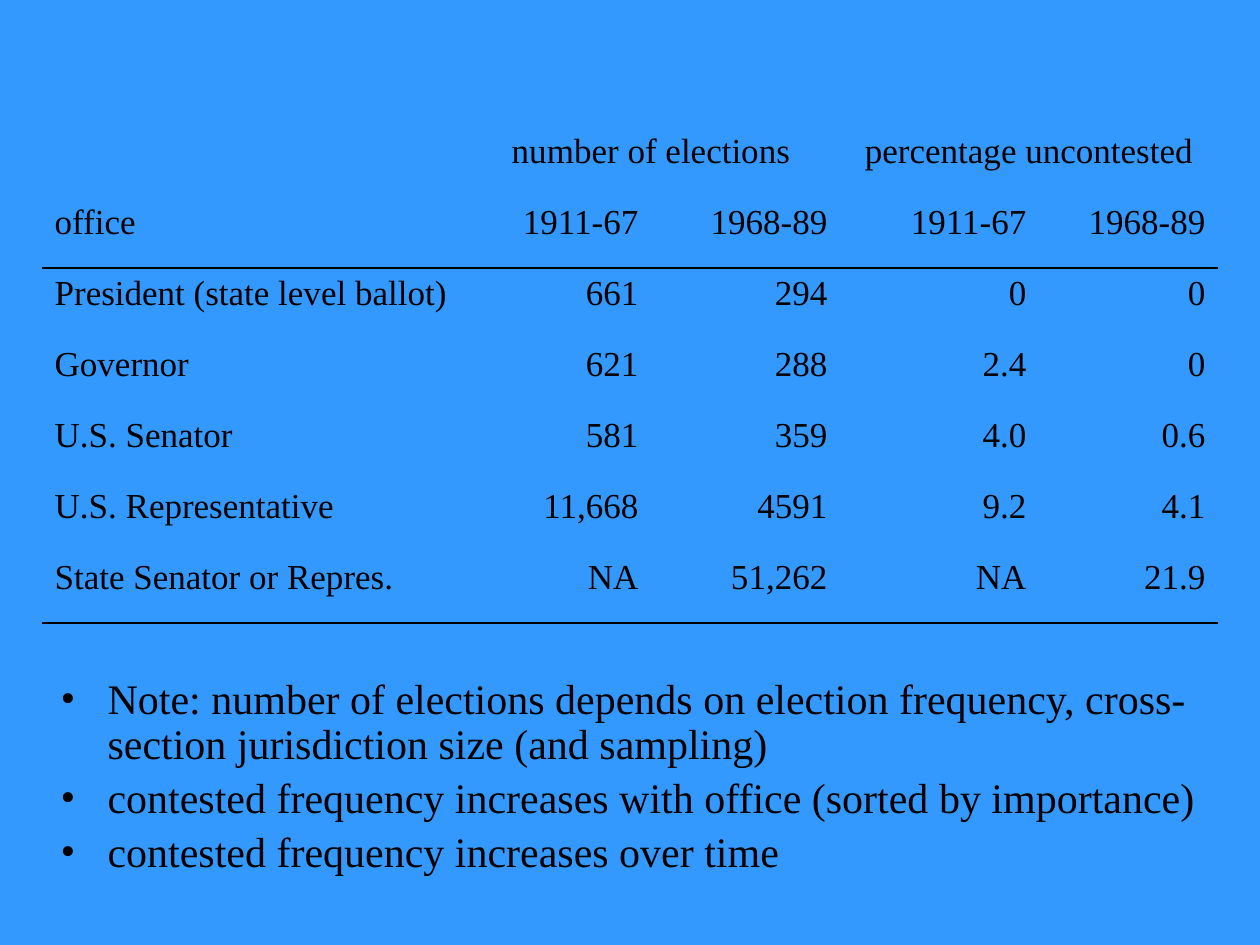
from lxml import etree
from pptx import Presentation
from pptx.dml.color import RGBColor
from pptx.enum.text import MSO_AUTO_SIZE, MSO_ANCHOR, PP_ALIGN
from pptx.oxml.ns import qn
from pptx.util import Pt

LEFT, CENTER, RIGHT = PP_ALIGN.LEFT, PP_ALIGN.CENTER, PP_ALIGN.RIGHT
NO_AUTOFIT, TOP = MSO_AUTO_SIZE.NONE, MSO_ANCHOR.TOP
PX = 914400 / 126
COLORS = {"background": "3399FF", "ink": "000000"}
PLAIN_TABLE_STYLE = "{2D5ABB26-0587-4C30-8999-92F81FD0307C}"

COLUMN_WIDTHS = [420, 189, 189, 199, 179]
ROW_HEIGHT = 71
GROUP_ROW, RULED_ROWS = 0, (1, 6)
ROWS = [
    ["", "number of elections", "", "percentage uncontested", ""],
    ["office", "1911-67", "1968-89", "1911-67", "1968-89"],
    ["President (state level ballot)", "661", "294", "0", "0"],
    ["Governor", "621", "288", "2.4", "0"],
    ["U.S. Senator", "581", "359", "4.0", "0.6"],
    ["U.S. Representative", "11,668", "4591", "9.2", "4.1"],
    ["State Senator or Repres.", "NA", "51,262", "NA", "21.9"],
]
NOTES = [
    "Note: number of elections depends on election frequency, "
    "cross-section jurisdiction size (and sampling)",
    "contested frequency increases with office (sorted by importance)",
    "contested frequency increases over time",
]


def px(length):
    return round(length * PX)


class SlideBuilder:
    """Holds the text style and the current slide."""

    def __init__(self, slide, font="Times New Roman"):
        self.slide = slide
        self.font = font

    def background(self, color):
        fill = self.slide.background.fill
        fill.solid()
        fill.fore_color.rgb = RGBColor.from_string(COLORS[color])

    def add_text(self, para, text, size, align=LEFT):
        para.alignment = align
        para.space_before = Pt(size * 0.2)
        span = para.add_run()
        span.text = text
        span.font.name = self.font
        span.font.size = Pt(size)
        span.font.color.rgb = RGBColor.from_string(COLORS["ink"])

    def rule_below(self, cell):
        line = etree.Element(qn("a:lnB"), w=str(Pt(1)))
        fill = etree.SubElement(line, qn("a:solidFill"))
        etree.SubElement(fill, qn("a:srgbClr"), val=COLORS["ink"])
        cell._tc.get_or_add_tcPr().insert(0, line)

    def table(self, left, top, rows, widths, row_height, size):
        frame = self.slide.shapes.add_table(
            len(rows), len(widths), px(left), px(top),
            px(sum(widths)), px(row_height * len(rows)))
        table = frame.table
        table.first_row = table.horz_banding = False
        table._tbl.tblPr.find(qn("a:tableStyleId")).text = PLAIN_TABLE_STYLE
        for column, width in zip(table.columns, widths):
            column.width = px(width)
        for row_index, row in enumerate(rows):
            table.rows[row_index].height = px(row_height)
            for column_index, text in enumerate(row):
                cell = table.cell(row_index, column_index)
                cell.fill.background()
                if row_index in RULED_ROWS:
                    self.rule_below(cell)
                if not text:
                    continue
                align = RIGHT if column_index else LEFT
                if row_index == GROUP_ROW:
                    cell.merge(table.cell(row_index, column_index + 1))
                    align = CENTER
                self.add_text(cell.text_frame.paragraphs[0], text, size, align)

    def bullets(self, left, top, width, height, items, size, indent):
        body = self.slide.placeholders[1]
        body.left, body.top = px(left), px(top)
        body.width, body.height = px(width), px(height)
        frame = body.text_frame
        frame.word_wrap = True
        frame.auto_size = NO_AUTOFIT
        frame.vertical_anchor = TOP
        for index, item in enumerate(items):
            para = frame.add_paragraph() if index else frame.paragraphs[0]
            self.add_text(para, item, size)
            para.line_spacing = 0.9
            properties = para._p.get_or_add_pPr()
            properties.set("marL", str(px(indent)))
            properties.set("indent", str(-px(indent)))
            etree.SubElement(properties, qn("a:buFont"), typeface=self.font)
            etree.SubElement(properties, qn("a:buChar"), char="•")


def main():
    deck = Presentation()
    deck.slide_width, deck.slide_height = px(1260), px(945)
    page = deck.slides.add_slide(deck.slide_layouts[1])
    title = page.shapes.title
    title.element.getparent().remove(title.element)

    builder = SlideBuilder(page)
    builder.background("background")
    builder.table(42, 126, ROWS, COLUMN_WIDTHS, ROW_HEIGHT, size=20)
    builder.bullets(48, 672, 1166, 242, NOTES, size=24, indent=47)
    deck.save("out.pptx")


if __name__ == "__main__":
    main()
